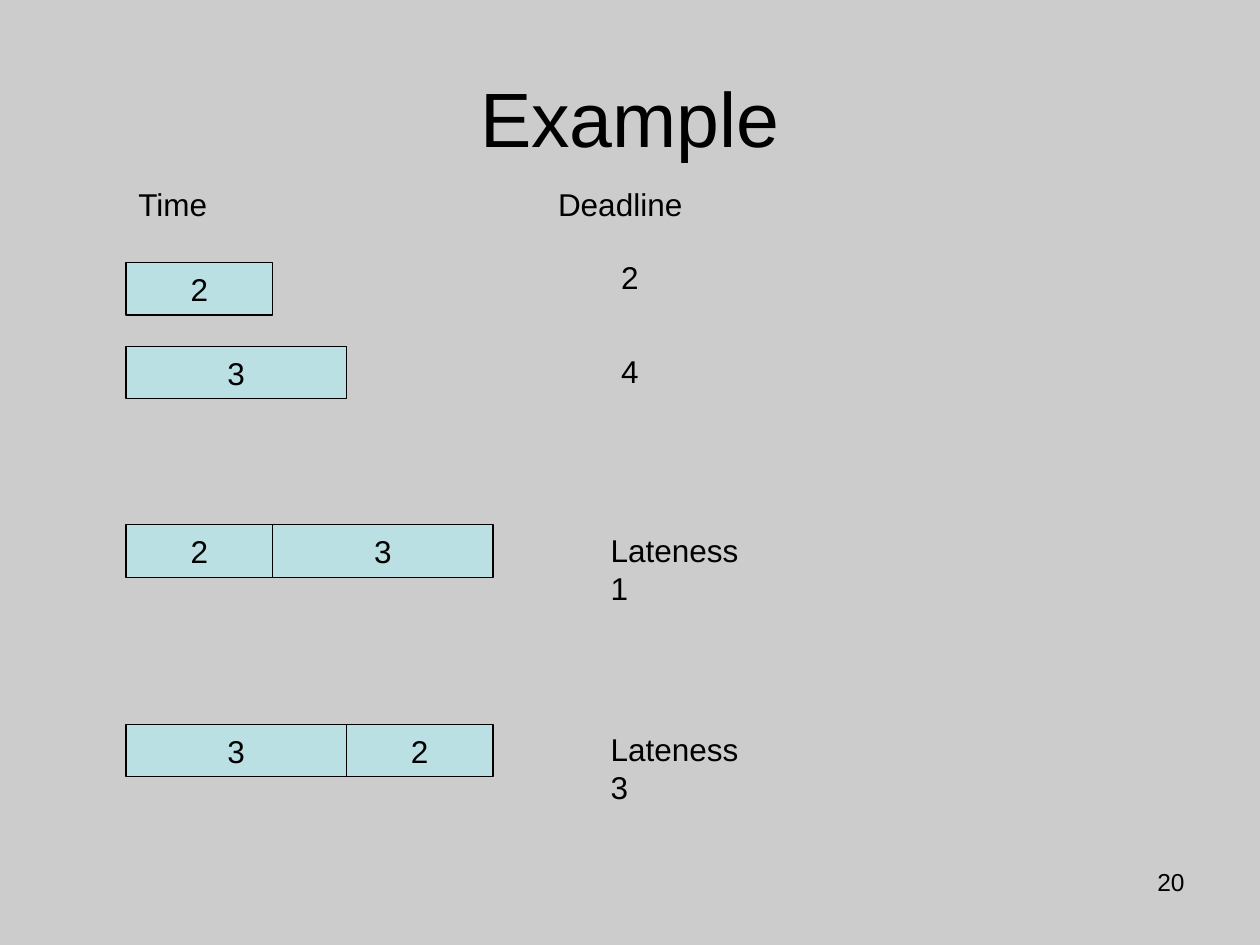
"""Build the scheduling example slide with job bars, deadlines and lateness."""
from pptx import Presentation
from pptx.dml.color import RGBColor
from pptx.enum.shapes import MSO_SHAPE as Shape
from pptx.enum.text import MSO_ANCHOR as Anchor, MSO_AUTO_SIZE as AutoSize, PP_ALIGN as Align
from pptx.util import Cm, Pt

BACKGROUND = RGBColor(0xCC, 0xCC, 0xCC)
BAR_FILL = RGBColor(0xBB, 0xE0, 0xE3)
INK = RGBColor(0, 0, 0)

LEFT = 2.54
TIME_UNIT = 1.48
BAR_HEIGHT = 1.06
LABEL_HEIGHT = 1.02


class SlideBuilder:
    def __init__(self, presentation):
        self.slide = presentation.slides.add_slide(presentation.slide_layouts[5])
        self.font = {"name": "Arial", "size": Pt(18)}
        fill = self.slide.background.fill
        fill.solid()
        fill.fore_color.rgb = BACKGROUND

    def set_text(self, shape, text, align, frame_format, **font_format):
        frame = shape.text_frame
        frame.text = text
        paragraph = frame.paragraphs[0]
        paragraph.alignment = align
        font = paragraph.runs[0].font
        font.color.rgb = INK
        for target, values in ((frame, frame_format), (font, self.font | font_format)):
            for name, value in values.items():
                setattr(target, name, value)

    def title(self, text):
        shape = self.slide.shapes.title
        place = {"left": Cm(1.27), "top": Cm(0.76), "width": Cm(22.86), "height": Cm(3.18)}
        for name, value in place.items():
            setattr(shape, name, value)
        self.set_text(shape, text, Align.CENTER, {"vertical_anchor": Anchor.MIDDLE}, size=Pt(44))

    def label(self, text, left, top, width, wrap=False):
        shape = self.slide.shapes.add_textbox(Cm(left), Cm(top), Cm(width), Cm(LABEL_HEIGHT))
        frame_format = {"word_wrap": wrap, "auto_size": AutoSize.SHAPE_TO_FIT_TEXT}
        self.set_text(shape, text, Align.LEFT, frame_format)

    def number(self, text):
        shape = self.slide.shapes.add_textbox(Cm(18.2), Cm(17.35), Cm(5.93), Cm(1.32))
        self.set_text(shape, text, Align.RIGHT, {"word_wrap": True}, size=Pt(14))

    def schedule(self, times, top):
        left = LEFT
        for time in times:
            width = time * TIME_UNIT
            bar = self.slide.shapes.add_shape(
                Shape.RECTANGLE, Cm(left), Cm(top), Cm(width), Cm(BAR_HEIGHT))
            bar.shadow.inherit = False
            bar.fill.solid()
            bar.fill.fore_color.rgb = BAR_FILL
            bar.line.color.rgb = INK
            bar.line.width = Pt(0.75)
            frame_format = {"vertical_anchor": Anchor.MIDDLE, "word_wrap": False}
            self.set_text(bar, str(time), Align.CENTER, frame_format)
            left += width


def main():
    presentation = Presentation()
    presentation.slide_width, presentation.slide_height = Cm(25.4), Cm(19.05)
    builder = SlideBuilder(presentation)
    builder.title("Example")
    for heading, left in (("Time", LEFT), ("Deadline", 11)):
        builder.label(heading, left, 3.6, 4.87, wrap=True)
    for time, bar_top, deadline, label_top in ((2, 5.29, "2", 5.08), (3, 6.98, "4", 6.98)):
        builder.schedule([time], bar_top)
        builder.label(deadline, 12.27, label_top, 0.86)
    for times, lateness, top in (((2, 3), 1, 10.58), ((3, 2), 3, 14.6)):
        builder.schedule(times, top)
        builder.label(f"Lateness {lateness}", 12.06, top, 3.6)
    builder.number("20")
    presentation.save("out.pptx")


if __name__ == "__main__":
    main()
